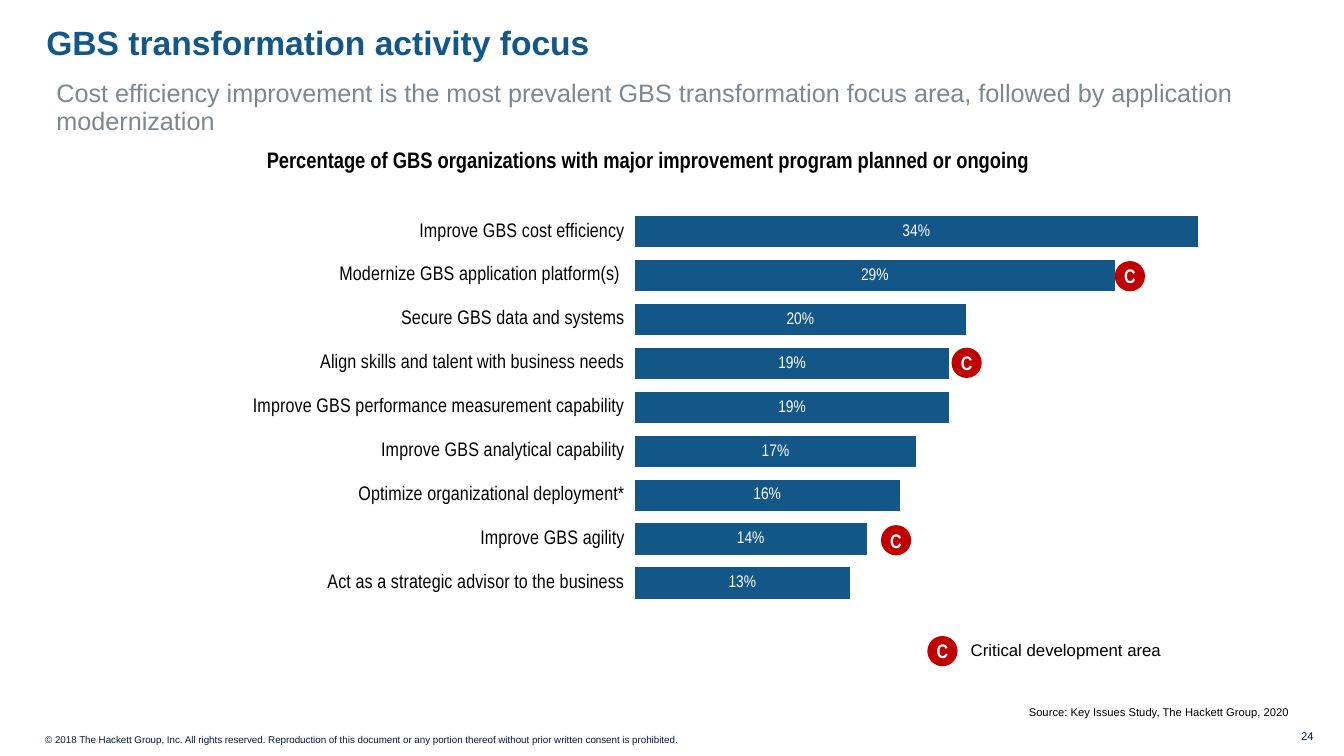
from lxml import etree
from pptx import Presentation
from pptx.chart.data import CategoryChartData
from pptx.dml.color import RGBColor
from pptx.enum.chart import XL_CHART_TYPE, XL_LABEL_POSITION, XL_TICK_MARK
from pptx.enum.shapes import MSO_SHAPE
from pptx.enum.text import MSO_ANCHOR, MSO_AUTO_SIZE, PP_ALIGN
from pptx.oxml.ns import qn
from pptx.util import Pt

BAR = XL_CHART_TYPE.BAR_STACKED
CENTER = XL_LABEL_POSITION.CENTER
TICK = XL_TICK_MARK.OUTSIDE
OVAL = MSO_SHAPE.OVAL
TOP, MIDDLE = MSO_ANCHOR.TOP, MSO_ANCHOR.MIDDLE
FIXED = MSO_AUTO_SIZE.NONE
LEFT, MID, RIGHT = PP_ALIGN.LEFT, PP_ALIGN.CENTER, PP_ALIGN.RIGHT

BLUE = RGBColor(0x13, 0x57, 0x89)
NAVY = RGBColor(0x00, 0x1C, 0x3A)
GRAY = RGBColor(0x7C, 0x87, 0x8E)
RED = RGBColor(0xC0, 0x00, 0x00)
BLACK = RGBColor(0x00, 0x00, 0x00)
WHITE = RGBColor(0xFF, 0xFF, 0xFF)

SANS, NARROW = "Arial", "Arial Narrow"
DOT = 21.6

FOCUS = [
    ("Improve GBS cost efficiency", 0.34),
    ("Modernize GBS application platform(s) ", 0.29),
    ("Secure GBS data and systems", 0.20),
    ("Align skills and talent with business needs", 0.19),
    ("Improve GBS performance measurement capability", 0.19),
    ("Improve GBS analytical capability", 0.17),
    ("Optimize organizational deployment*", 0.16),
    ("Improve GBS agility", 0.14),
    ("Act as a strategic advisor to the business", 0.13),
    ("", None),
]


def apply(item, values):
    for name, value in values.items():
        setattr(item, name, value)


def style(font, size, color, face=SANS, bold=False):
    apply(font, {"size": Pt(size), "name": face, "bold": bold})
    font.color.rgb = color


def place(shape, left, top, width, height):
    box = {"left": left, "top": top, "width": width, "height": height}
    apply(shape, {name: Pt(value) for name, value in box.items()})


def write(shape, text, size, color, face=SANS, bold=False, align=LEFT,
          anchor=TOP, wrap=True, flush=False, space=None):
    frame = shape.text_frame
    frame.text = text
    apply(frame, {"auto_size": FIXED, "word_wrap": wrap,
                  "vertical_anchor": anchor})
    if flush:
        sides = ("left", "right", "top", "bottom")
        apply(frame, {"margin_" + side: 0 for side in sides})
    para = frame.paragraphs[0]
    apply(para, {"alignment": align, "line_spacing": space,
                 "space_before": Pt(0)})
    style(para.runs[0].font, size, color, face, bold)


def add_text(shapes, box, text, size, color, **look):
    label = shapes.add_textbox(*map(Pt, box))
    write(label, text, size, color, **look)


def fill_body(holder, box, text, size, color, **look):
    place(holder, *box)
    write(holder, text, size, color, **look)
    props = holder.text_frame.paragraphs[0]._p.get_or_add_pPr()
    props.set("marL", "0")
    props.set("indent", "0")
    etree.SubElement(props, qn("a:buNone"))


def add_dot(shapes, left, top):
    dot = shapes.add_shape(OVAL, Pt(left), Pt(top), Pt(DOT), Pt(DOT))
    dot.shadow.inherit = False
    dot.fill.solid()
    dot.fill.fore_color.rgb = RED
    dot.line.fill.background()
    write(dot, "C", 14, WHITE, face=NARROW, bold=True, align=MID,
          anchor=MIDDLE, wrap=False, flush=True)


def set_plot(chart, x, y, w, h):
    area = chart._chartSpace.chart.plotArea
    for old in area.findall(qn("c:layout")):
        area.remove(old)
    layout = etree.Element(qn("c:layout"))
    manual = etree.SubElement(layout, qn("c:manualLayout"))
    rules = {"layoutTarget": "inner", "xMode": "edge", "yMode": "edge",
             "x": x, "y": y, "w": w, "h": h}
    for name, value in rules.items():
        etree.SubElement(manual, qn("c:" + name)).set("val", str(value))
    area.insert(0, layout)


def add_bars(shapes, box):
    data = CategoryChartData(number_format="0%")
    names, values = zip(*FOCUS)
    data.categories = names
    data.add_series("Series 1", values)
    chart = shapes.add_chart(BAR, *map(Pt, box), data).chart
    apply(chart, {"has_title": False, "has_legend": False})
    style(chart.font, 12, BLACK, NARROW)

    axis = chart.category_axis
    apply(axis, {"reverse_order": True, "major_tick_mark": TICK,
                 "has_major_gridlines": False})
    axis.format.line.fill.background()
    style(axis.tick_labels.font, 14, BLACK, NARROW)
    apply(chart.value_axis, {"visible": False, "minimum_scale": 0,
                             "maximum_scale": 0.4,
                             "has_major_gridlines": False})

    plot = chart.plots[0]
    apply(plot, {"gap_width": 40, "overlap": 100,
                 "vary_by_categories": False, "has_data_labels": True})
    fill = plot.series[0].format.fill
    fill.solid()
    fill.fore_color.rgb = BLUE
    labels = plot.data_labels
    apply(labels, {"show_value": True, "position": CENTER,
                   "number_format": "0%", "number_format_is_linked": False})
    style(labels.font, 12, WHITE, NARROW)
    set_plot(chart, 0.47, 0.05, 0.53, 0.9)


def add_key(shapes):
    parts = shapes.add_group_shape().shapes
    add_dot(parts, 662.4, 454.3)
    add_text(parts, (693.4, 457.9, 136.8, 13.7), "Critical development area",
             12, BLACK, wrap=False, flush=True, space=0.95)


def main():
    deck = Presentation()
    apply(deck, {"slide_width": Pt(960), "slide_height": Pt(540)})
    slide = deck.slides.add_slide(deck.slide_layouts[3])
    shapes = slide.shapes
    title, lead, source = list(slide.placeholders)[:3]

    place(title, 33.1, 18.7, 895, 32.4)
    write(title, "GBS transformation activity focus", 24, BLUE, bold=True,
          flush=True, space=0.9)
    fill_body(lead, (33.1, 53.3, 894.2, 33.1),
              "Cost efficiency improvement is the most prevalent GBS "
              "transformation focus area, followed by application "
              "modernization", 18, GRAY, space=Pt(20))
    fill_body(source, (490.3, 500.4, 437.8, 13.7),
              "Source: Key Issues Study, The Hackett Group, 2020", 8, BLACK,
              align=RIGHT)
    add_text(shapes, (618.5, 517.7, 326.9, 17.3), "24", 8, NAVY, align=RIGHT)
    add_text(shapes, (25.2, 520.6, 722.2, 15.8),
             "© 2018 The Hackett Group, Inc. All rights reserved. "
             "Reproduction of this document or any portion thereof without "
             "prior written consent is prohibited.", 7, NAVY)
    add_text(shapes, (73.4, 93.6, 779, 40.3),
             "Percentage of GBS organizations with major improvement program "
             "planned or ongoing", 16, BLACK, face=NARROW, bold=True,
             align=MID, anchor=MIDDLE)

    add_bars(shapes, (33.8, 132.5, 892.8, 348.5))
    add_key(shapes)
    for left, top in ((629.3, 375.1), (679.7, 248.4), (796.3, 186.5)):
        add_dot(shapes, left, top)
    deck.save("out.pptx")


if __name__ == "__main__":
    main()
